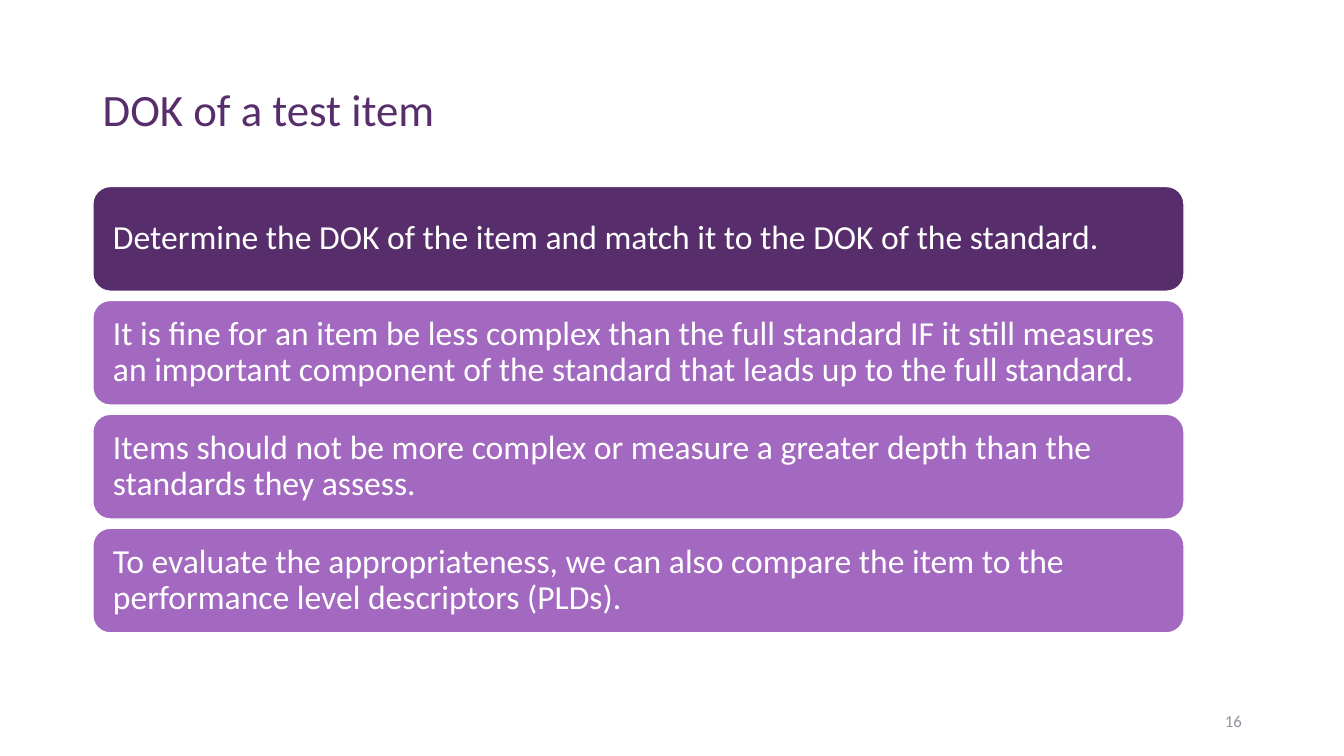
"""Build the slide on the DOK of a test item."""
from dataclasses import dataclass

from pptx import Presentation
from pptx import util as u
from pptx.dml.color import RGBColor
from pptx.enum import shapes, text

TITLE = "DOK of a test item"
PAGE_NUMBER = "16"
STATEMENTS = [
    "Determine the DOK of the item and match it to the DOK of the standard.",
    "It is fine for an item be less complex than the full standard IF it still measures "
    "an important component of the standard that leads up to the full standard.",
    "Items should not be more complex or measure a greater depth than the standards they assess.",
    "To evaluate the appropriateness, we can also compare the item to the "
    "performance level descriptors (PLDs).",
]


@dataclass(frozen=True)
class Theme:
    """Colours, font and type sizes."""
    font: str = "Calibri"
    dark: str = "572D6B"
    light: str = "A368BF"
    white: str = "FFFFFF"
    muted: str = "9A8FA2"
    title_size: int = 32
    body_size: int = 24
    number_size: int = 12


THEME = Theme()
LEFT = 2.34
BAR_TOP, BAR_WIDTH, BAR_HEIGHT, BAR_PITCH = 4.7, 27.5, 2.64, 2.87
BAR_INSET = 0.38


def write(box, words, size, color, anchor, align=text.PP_ALIGN.LEFT, spacing=0.9):
    """Put one styled run in a box."""
    frame = box.text_frame
    frame.word_wrap = True
    frame.vertical_anchor = anchor
    para = frame.paragraphs[0]
    para.alignment = align
    para.line_spacing = spacing
    span = para.add_run()
    span.text = words
    span.font.name = THEME.font
    span.font.size = u.Pt(size)
    span.font.color.rgb = RGBColor.from_string(color)


def add_bar(page, index, statement):
    """Draw one rounded bar of the stack with its statement."""
    bar = page.shapes.add_shape(
        shapes.MSO_SHAPE.ROUNDED_RECTANGLE, u.Cm(LEFT), u.Cm(BAR_TOP + index * BAR_PITCH),
        u.Cm(BAR_WIDTH), u.Cm(BAR_HEIGHT))
    bar.shadow.inherit = False
    bar.fill.solid()
    bar.fill.fore_color.rgb = RGBColor.from_string(THEME.light if index else THEME.dark)
    bar.line.color.rgb = RGBColor.from_string(THEME.white)
    bar.line.width = u.Pt(1)
    frame = bar.text_frame
    frame.margin_left = frame.margin_right = u.Cm(BAR_INSET)
    frame.margin_top = frame.margin_bottom = u.Cm(BAR_INSET)
    write(bar, statement, THEME.body_size, THEME.white, text.MSO_ANCHOR.MIDDLE)


def main():
    """Assemble and save the deck."""
    deck = Presentation()
    deck.slide_width, deck.slide_height = u.Cm(33.87), u.Cm(19.05)
    page = deck.slides.add_slide(deck.slide_layouts[6])

    title = page.shapes.add_textbox(u.Cm(LEFT), u.Cm(1.27), u.Cm(10.92), u.Cm(2.29))
    write(title, TITLE, THEME.title_size, THEME.dark, text.MSO_ANCHOR.BOTTOM)

    number = page.shapes.add_textbox(u.Cm(23.93), u.Cm(17.65), u.Cm(7.62), u.Cm(1.02))
    write(number, PAGE_NUMBER, THEME.number_size, THEME.muted, text.MSO_ANCHOR.MIDDLE,
          text.PP_ALIGN.RIGHT, 1.0)

    for index, statement in enumerate(STATEMENTS):
        add_bar(page, index, statement)

    deck.save("out.pptx")


if __name__ == "__main__":
    main()
